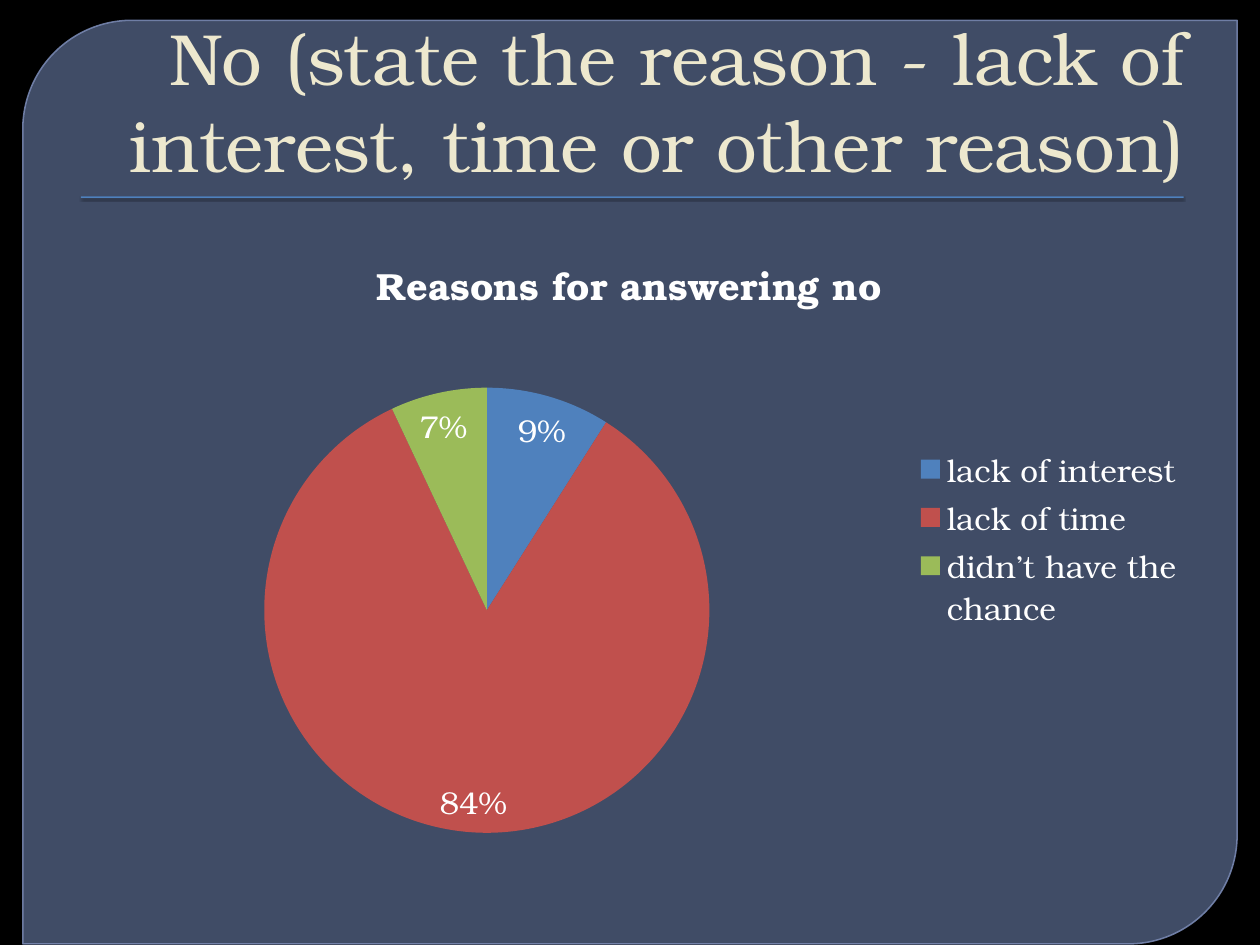
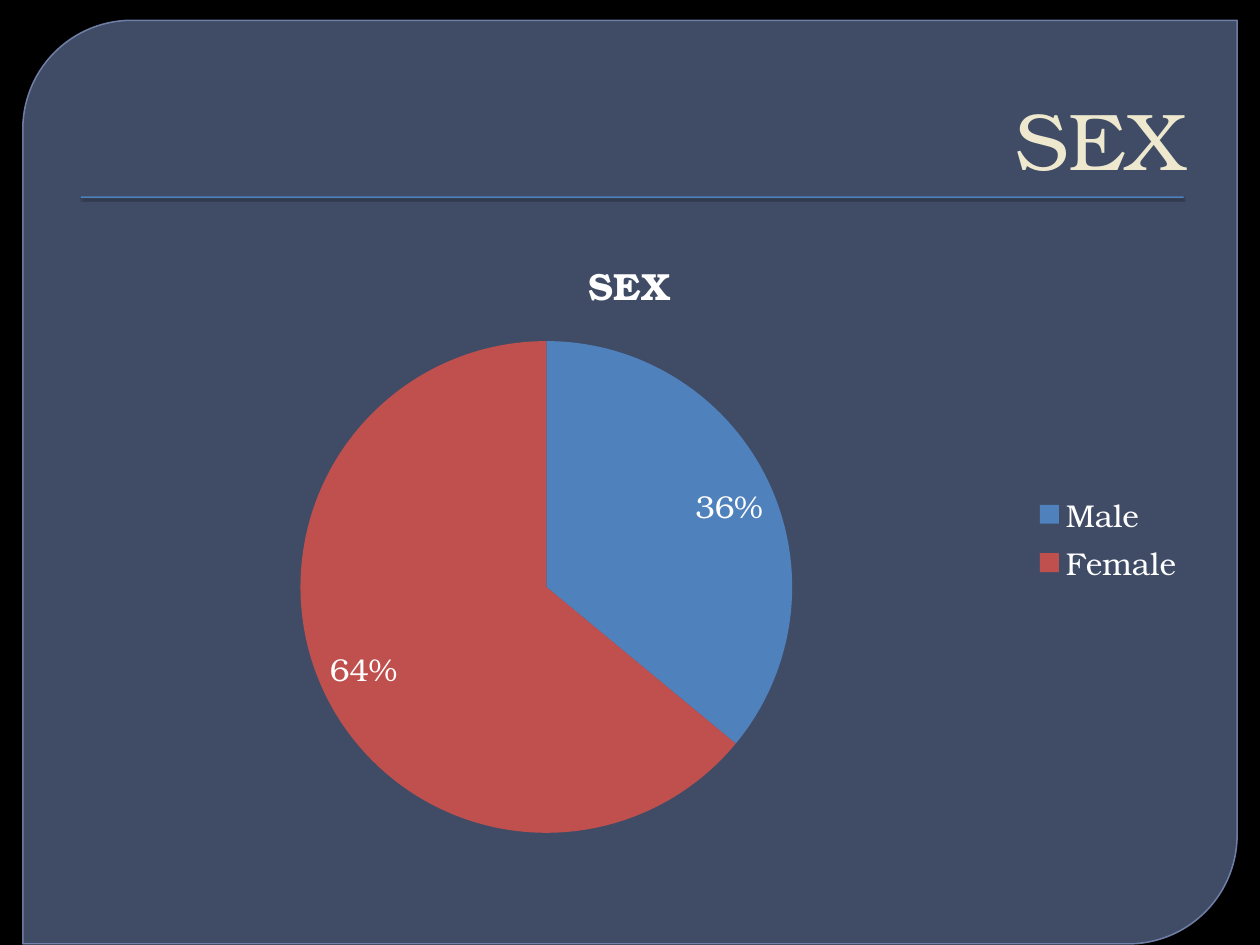
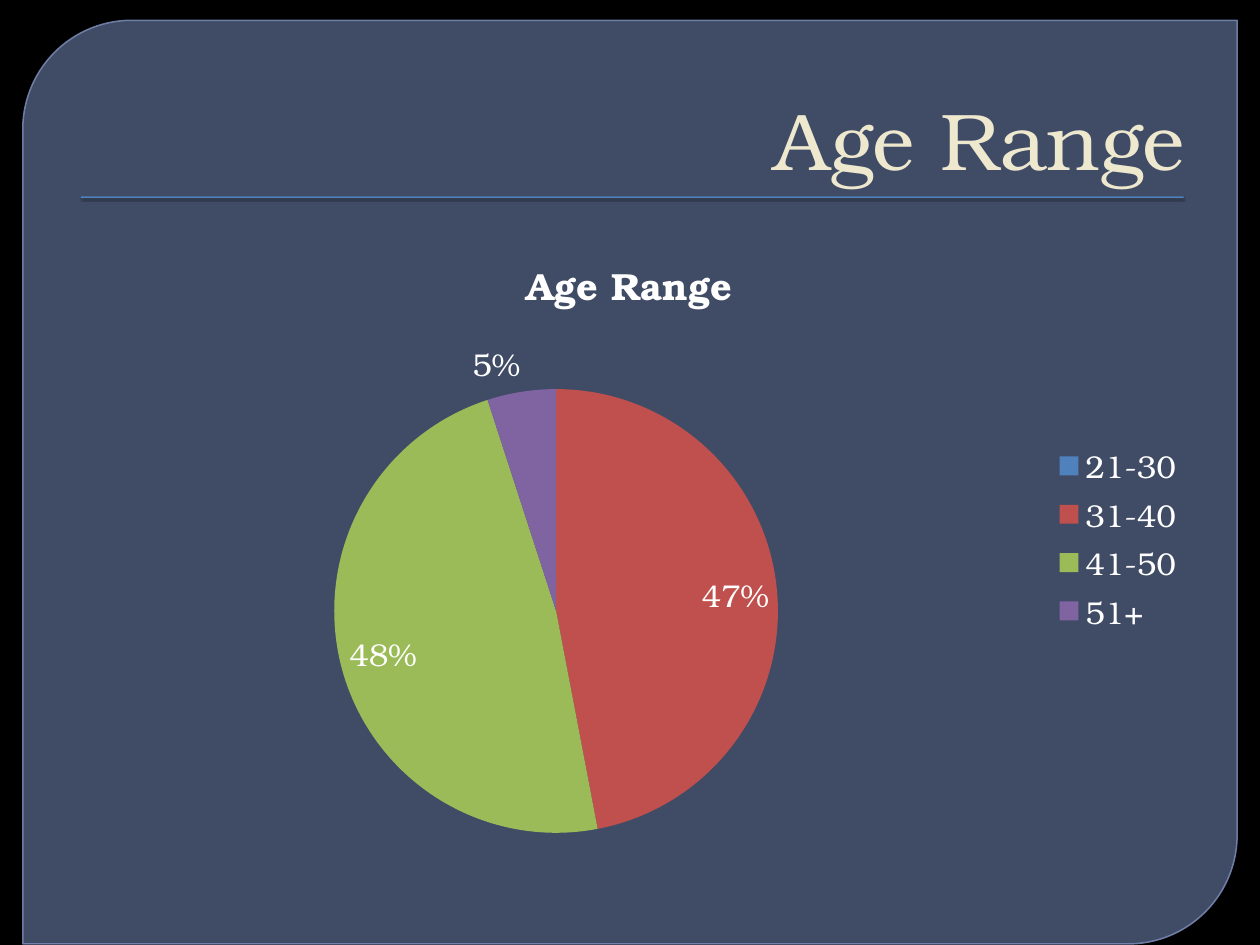
from lxml import etree
from pptx import Presentation
from pptx import util as u
from pptx.chart.data import CategoryChartData
from pptx.dml.color import RGBColor
from pptx.enum import chart as charts, shapes, text
from pptx.oxml.ns import qn

FONT = "TeX Gyre Bonum"
BLACK, WHITE, CREAM = "000000", "FFFFFF", "EDE8CE"
PANEL, PANEL_EDGE, RULE = "63759D", "7989B3", "4F81BD"
SLICES = ["4F81BD", "C0504D", "9BBB59", "8064A2"]

# Slide title, title size, chart title, slices
SURVEY = [
    ("No (state the reason - lack of interest, time or other reason)", 41.4,
     "Reasons for answering no",
     {"lack of interest": 9, "lack of time": 84, "didn’t have the chance": 7}),
    ("SEX", 46, "SEX", {"Male": 36, "Female": 64}),
    ("Age Range", 46, "Age Range",
     {"21-30": 0, "31-40": 47, "41-50": 48, "51+": 5}),
]


def color(hex_string):
    return RGBColor.from_string(hex_string)


def style_font(font, size, hex_string, bold=False):
    font.name, font.size, font.bold = FONT, u.Pt(size), bold
    font.color.rgb = color(hex_string)


def set_alpha(fill_parent, percent):
    rgb = fill_parent.find(".//" + qn("a:srgbClr"))
    etree.SubElement(rgb, qn("a:alpha"), val=str(percent * 1000))


def add_filled_shape(slide, kind, box, hex_string):
    shape = slide.shapes.add_shape(kind, *map(u.Cm, box))
    shape.shadow.inherit = False
    shape.fill.solid()
    shape.fill.fore_color.rgb = color(hex_string)
    shape.line.fill.background()
    return shape


def add_panel(slide):
    panel = add_filled_shape(slide, shapes.MSO_SHAPE.ROUND_2_DIAG_RECTANGLE,
                             (0.46, 0.41, 24.48, 18.62), PANEL)
    panel.adjustments[0] = 0.118
    panel.line.color.rgb = color(PANEL_EDGE)
    panel.line.width = u.Pt(0.87)
    properties = panel.element.spPr
    set_alpha(properties.find(qn("a:solidFill")), 65)
    set_alpha(properties.find(qn("a:ln")), 88)
    return panel


def add_title_rule(slide):
    rule = add_filled_shape(slide, shapes.MSO_SHAPE.RECTANGLE,
                            (1.63, 3.96, 22.23, 0.03), RULE)
    effects = rule.element.spPr.find(qn("a:effectLst"))
    shadow = etree.SubElement(effects, qn("a:outerShdw"), blurRad=str(u.Pt(1)),
                              dist=str(u.Pt(1)), dir="5400000")
    etree.SubElement(shadow, qn("a:srgbClr"), val=BLACK)
    set_alpha(shadow, 75)
    return rule


def decorate_layout(layout, slide):
    """Give the layout its black ground, panel and rule, drawn on a slide first."""
    layout.background.fill.solid()
    layout.background.fill.fore_color.rgb = color(BLACK)
    for position, shape in enumerate((add_panel(slide), add_title_rule(slide)), 2):
        layout.shapes.element.insert(position, shape.element)


def set_title(slide, words, size):
    title = slide.shapes.title
    title.left, title.top, title.width, title.height = map(
        u.Cm, (1.27, 0.71, 22.86, 3.18))
    frame = title.text_frame
    frame.word_wrap = True
    frame.auto_size = text.MSO_AUTO_SIZE.NONE
    frame.vertical_anchor = text.MSO_ANCHOR.BOTTOM
    paragraph = frame.paragraphs[0]
    paragraph.alignment = text.PP_ALIGN.RIGHT
    paragraph._p.get_or_add_pPr().set("marL", str(u.Cm(0.15)))
    run = paragraph.add_run()
    run.text = words
    style_font(run.font, size, CREAM)


def hide_label(chart, index):
    labels = chart.element.find(".//" + qn("c:dLbls"))
    label = etree.Element(qn("c:dLbl"))
    etree.SubElement(label, qn("c:idx"), val=str(index))
    etree.SubElement(label, qn("c:delete"), val="1")
    labels.insert(0, label)


def add_pie(slide, name, answers):
    data = CategoryChartData()
    data.categories = list(answers)
    data.add_series(name, list(answers.values()))
    chart = slide.shapes.add_chart(
        charts.XL_CHART_TYPE.PIE, *map(u.Cm, (1.27, 4.57, 22.86, 12.57)), data).chart
    style_font(chart.font, 18, WHITE)

    # Chart title and legend
    run = chart.chart_title.text_frame.paragraphs[0].add_run()
    run.text = name
    style_font(run.font, 21.6, WHITE, bold=True)
    chart.has_legend = True
    chart.legend.position = charts.XL_LEGEND_POSITION.RIGHT
    chart.legend.include_in_layout = False

    # Slices and percentages
    plot = chart.plots[0]
    plot.vary_by_categories = True
    series = plot.series[0]
    labels = series.data_labels
    labels.show_percentage, labels.show_value = True, False
    labels.number_format, labels.number_format_is_linked = "0%", False
    labels.position = charts.XL_LABEL_POSITION.BEST_FIT
    style_font(labels.font, 18, WHITE)
    for index, value in enumerate(answers.values()):
        slice_format = series.points[index].format
        slice_format.fill.solid()
        slice_format.fill.fore_color.rgb = color(SLICES[index])
        slice_format.line.fill.background()
        if value == 0:
            hide_label(chart, index)


def main():
    presentation = Presentation()
    presentation.slide_width, presentation.slide_height = u.Cm(25.4), u.Cm(19.05)
    layout = presentation.slide_layouts.get_by_name("Title Only")
    for words, size, name, answers in SURVEY:
        slide = presentation.slides.add_slide(layout)
        set_title(slide, words, size)
        add_pie(slide, name, answers)
    decorate_layout(layout, presentation.slides[0])
    presentation.save("out.pptx")


if __name__ == "__main__":
    main()
